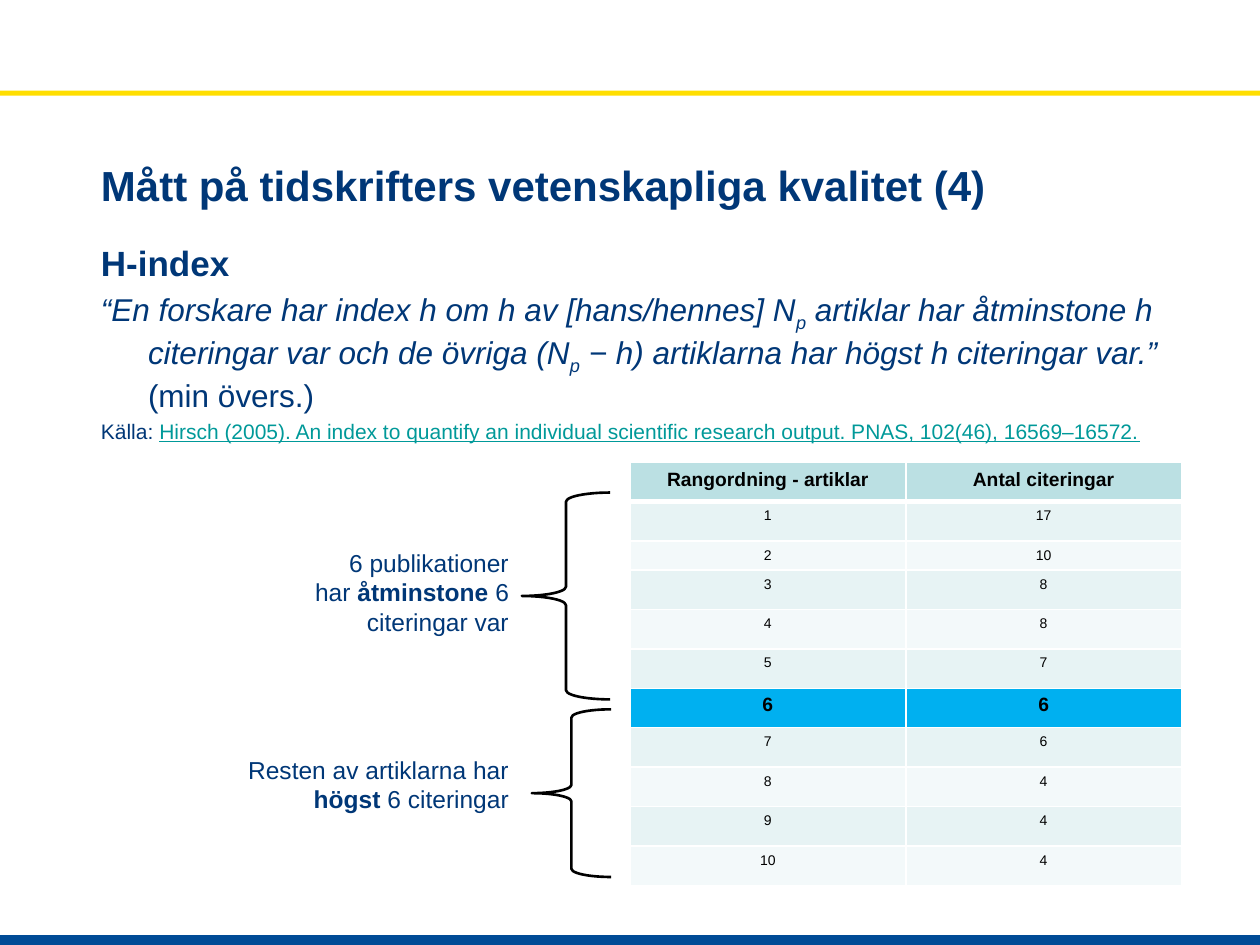
from typing import NamedTuple

import lxml.etree
import pptx
import pptx.dml.color
import pptx.enum.shapes
import pptx.enum.text
import pptx.oxml.ns
import pptx.util

Cm = pptx.util.Cm
Pt = pptx.util.Pt
qn = pptx.oxml.ns.qn
ALIGN = pptx.enum.text.PP_ALIGN
ANCHOR = pptx.enum.text.MSO_ANCHOR
SHAPE = pptx.enum.shapes.MSO_SHAPE
NAVY, BLACK, WHITE = "003777", "000000", "FFFFFF"
HEAD, BAND, PALE, MARK = "BBE0E3", "E7F3F4", "F3F9FA", "00B0F0"


class Box(NamedTuple):
    x: float
    y: float
    w: float
    h: float


class Run(NamedTuple):
    text: str
    size: float
    color: str = NAVY
    bold: bool = False
    slant: bool = False
    line: bool = False
    sub: bool = False


class Group(NamedTuple):
    """A brace beside the table and the note it points to."""
    brace: Box
    note: Box
    runs: list[Run]


def paint(target, color: str) -> None:
    """Give a fill or a font one plain colour."""
    if hasattr(target, "solid"):
        target.solid()
        target = target.fore_color
    else:
        target = target.color
    target.rgb = pptx.dml.color.RGBColor.from_string(color)


def place(shape, box: Box) -> None:
    shape.left, shape.top, shape.width, shape.height = map(Cm, box)


def write(para, runs: list[Run]) -> None:
    for item in runs:
        if item.text == "\n":
            para.add_line_break()
            continue
        run = para.add_run()
        run.text = item.text
        font = run.font
        font.name, font.size = "Arial", Pt(item.size)
        font.bold, font.italic = item.bold, item.slant
        font.underline = item.line
        paint(font, item.color)
        if item.sub:
            font._element.set("baseline", "-25000")


def hang(para) -> None:
    """Drop the bullet and set a hanging indent."""
    props = para._p.get_or_add_pPr()
    props.set("marL", str(Cm(0.95)))
    props.set("indent", str(-Cm(0.95)))
    lxml.etree.SubElement(props, qn("a:buNone"))


def bar(slide, box: Box, color: str) -> None:
    shape = slide.shapes.add_shape(SHAPE.RECTANGLE, *map(Cm, box))
    shape.shadow.inherit = False
    paint(shape.fill, color)
    shape.line.fill.background()


def edge(cell, sides: dict[str, float]) -> None:
    """Draw white borders, with a width in points for each side."""
    props = cell._tc.get_or_add_tcPr()
    for side, width in sides.items():
        line = lxml.etree.SubElement(props, qn(f"a:ln{side}"), w=str(Pt(width)))
        fill = lxml.etree.SubElement(line, qn("a:solidFill"))
        lxml.etree.SubElement(fill, qn("a:srgbClr"), val=WHITE)


def grid(slide, box: Box, rows: list[tuple], mark: int, low: int) -> None:
    """Draw the table; row mark is highlighted and row low is shorter."""
    table = slide.shapes.add_table(len(rows), 2, *map(Cm, box)).table
    table.first_row = table.horz_banding = False
    short = 0.58
    tall = (box.h - short) / (len(rows) - 1)
    for i, row in enumerate(rows):
        table.rows[i].height = Cm(short if i == low else tall)
        strong = i in (0, mark)
        color = {0: HEAD, mark: MARK}.get(i, BAND if i % 2 else PALE)
        for j, value in enumerate(row):
            cell = table.cell(i, j)
            edge(cell, {"L": 1, "R": 1, "T": 3 if i == 1 else 1,
                        "B": 3 if i == 0 else 1})
            paint(cell.fill, color)
            para = cell.text_frame.paragraphs[0]
            para.alignment = ALIGN.CENTER
            write(para, [Run(str(value), 11 if strong else 8, BLACK, strong)])


def draw(slide, group: Group) -> None:
    brace = slide.shapes.add_shape(SHAPE.LEFT_BRACE, *map(Cm, group.brace))
    brace.shadow.inherit = False
    brace.adjustments[0] = 0.104
    brace.fill.background()
    paint(brace.line.fill, BLACK)
    brace.line.width = Pt(1.5)
    frame = slide.shapes.add_textbox(*map(Cm, group.note)).text_frame
    frame.word_wrap = True
    para = frame.paragraphs[0]
    para.alignment = ALIGN.RIGHT
    write(para, group.runs)


BODY = [
    [Run("H-index", 20, bold=True)],
    [Run("“En forskare har index h om h av [hans/hennes] N", 18, slant=True),
     Run("p", 18, slant=True, sub=True),
     Run(" artiklar har åtminstone h citeringar var och de övriga (N", 18,
         slant=True),
     Run("p", 18, slant=True, sub=True),
     Run(" − h) artiklarna har högst h citeringar var.”", 18, slant=True),
     Run("\n", 18),
     Run("(min övers.)", 18)],
    [Run("Källa: ", 12),
     Run("Hirsch (2005). An index to quantify an individual scientific "
         "research output. PNAS, 102(46), 16569–16572.", 12, "009999",
         line=True)],
]
CITES = [17, 10, 8, 8, 7, 6, 6, 4, 4, 4]
ROWS = [("Rangordning - artiklar", "Antal citeringar"), *enumerate(CITES, 1)]
GROUPS = [
    Group(Box(10.52, 9.93, 1.78, 4.17), Box(5.96, 10.92, 4.55, 2.06),
          [Run("6 publikationer har ", 14), Run("åtminstone ", 14, bold=True),
           Run("6 citeringar var", 14)]),
    Group(Box(10.72, 14.3, 1.6, 3.38), Box(4.57, 15.09, 5.94, 1.45),
          [Run("Resten av artiklarna har ", 14), Run("högst", 14, bold=True),
           Run(" 6 citeringar", 14)]),
]


def main() -> None:
    deck = pptx.Presentation()
    deck.slide_width, deck.slide_height = Cm(25.4), Cm(19.05)
    slide = deck.slides.add_slide(deck.slide_layouts[1])
    bar(slide, Box(0, 18.85, 25.4, 0.2), "004B96")
    bar(slide, Box(0, 1.83, 25.4, 0.1), "FFDE00")

    title, body = slide.shapes.title, slide.placeholders[1]
    place(title, Box(1.78, 2.77, 20.24, 1.9))
    title.text_frame.vertical_anchor = ANCHOR.MIDDLE
    para = title.text_frame.paragraphs[0]
    para.alignment = ALIGN.LEFT
    write(para, [Run("Mått på tidskrifters vetenskapliga kvalitet (4)", 24,
                     bold=True)])

    place(body, Box(1.78, 4.75, 23.19, 13.49))
    frame = body.text_frame
    frame.auto_size = pptx.enum.text.MSO_AUTO_SIZE.NONE
    for i, runs in enumerate(BODY):
        para = frame.add_paragraph() if i else frame.paragraphs[0]
        hang(para)
        para.space_before = Pt(0.2 * runs[0].size if i else 0)
        write(para, runs)

    grid(slide, Box(12.7, 9.32, 11.12, 8.53), ROWS, mark=6, low=2)
    for group in GROUPS:
        draw(slide, group)
    deck.save("out.pptx")


if __name__ == "__main__":
    main()
